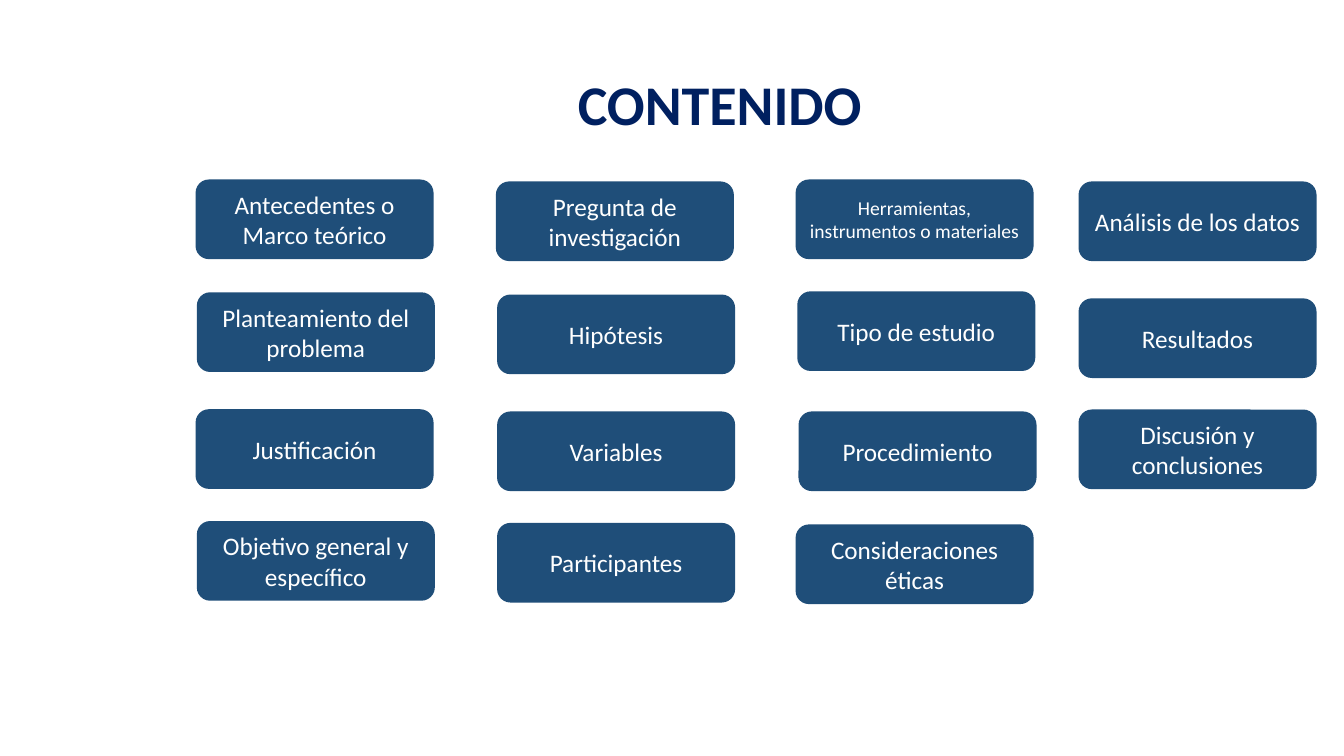
from pptx import Presentation
from pptx.dml.color import RGBColor
from pptx.enum import shapes, text
from pptx.util import Pt

COLORS = {"title": "002060", "card": "1F4E79", "card_text": "FFFFFF"}
FONT = "Calibri"
CARD_SIZE = (170, 56.9)

# Each column: left edge, then (shift right, top, topic, text size)
COLUMNS = [
    (139.7, [(0, 128.2, "Antecedentes o Marco teórico", 18),
             (0.9, 208.8, "Planteamiento del problema", 18),
             (0, 292.3, "Justificación", 18),
             (0.9, 372.2, "Objetivo general y específico", 18)]),
    (354.2, [(0, 129.6, "Pregunta de investigación", 18),
             (0.9, 210.4, "Hipótesis", 18),
             (0.9, 293.9, "Variables", 18),
             (0.9, 373.5, "Participantes", 18)]),
    (568.3, [(0, 128.2, "Herramientas, instrumentos o materiales", 14),
             (1.2, 208.1, "Tipo de estudio", 18),
             (2.1, 293.9, "Procedimiento", 18),
             (0, 374.6, "Consideraciones éticas", 18)]),
    (770.4, [(0, 129.6, "Análisis de los datos", 18),
             (0, 213.1, "Resultados", 18),
             (0, 292.5, "Discusión y conclusiones", 18)]),
]


def write(shape, words, size, color, bold=False, inset=6, line_spacing=1.0):
    frame = shape.text_frame
    frame_format = {
        "word_wrap": True, "vertical_anchor": text.MSO_ANCHOR.MIDDLE,
        "margin_left": Pt(inset), "margin_right": Pt(inset),
        "margin_top": Pt(3.6), "margin_bottom": Pt(3.6),
    }
    for name, value in frame_format.items():
        setattr(frame, name, value)
    paragraph = frame.paragraphs[0]
    paragraph.alignment = text.PP_ALIGN.CENTER
    paragraph.line_spacing = line_spacing
    run = paragraph.add_run()
    run.text = words
    for name, value in {"name": FONT, "size": Pt(size), "bold": bold}.items():
        setattr(run.font, name, value)
    run.font.color.rgb = RGBColor.from_string(COLORS[color])


def add_title(slide, left, top, width, height):
    title = slide.shapes.add_textbox(Pt(left), Pt(top), Pt(width), Pt(height))
    write(title, "CONTENIDO", 40, "title", bold=True, inset=7.2, line_spacing=0.9)


def add_card(slide, left, top, width, height, topic, size):
    card = slide.shapes.add_shape(shapes.MSO_SHAPE.ROUNDED_RECTANGLE,
                                  Pt(left), Pt(top), Pt(width), Pt(height))
    card.shadow.inherit = False
    card.fill.solid()
    card.fill.fore_color.rgb = RGBColor.from_string(COLORS["card"])
    card.line.fill.background()
    write(card, topic, size, "card_text")


def add_column(slide, left, cards):
    for shift, top, topic, size in cards:
        add_card(slide, left + shift, top, *CARD_SIZE, topic, size)


def main():
    presentation = Presentation()
    presentation.slide_width, presentation.slide_height = Pt(960), Pt(540)
    slide = presentation.slides.add_slide(presentation.slide_layouts[6])

    # Heading
    add_title(slide, 139.7, 46.1, 748.8, 61.2)

    # Topic cards
    for left, cards in COLUMNS:
        add_column(slide, left, cards)

    presentation.save("out.pptx")


if __name__ == "__main__":
    main()
